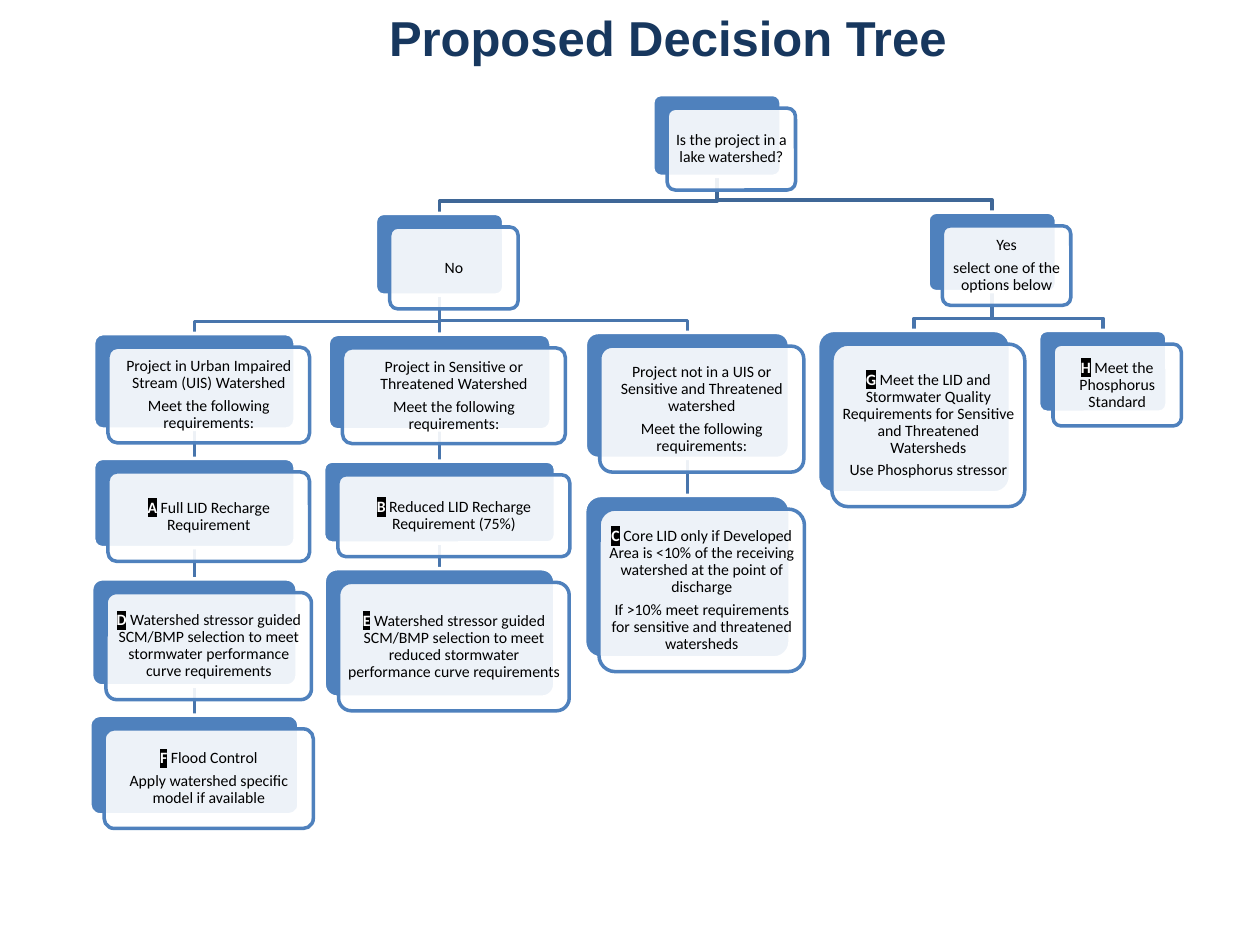
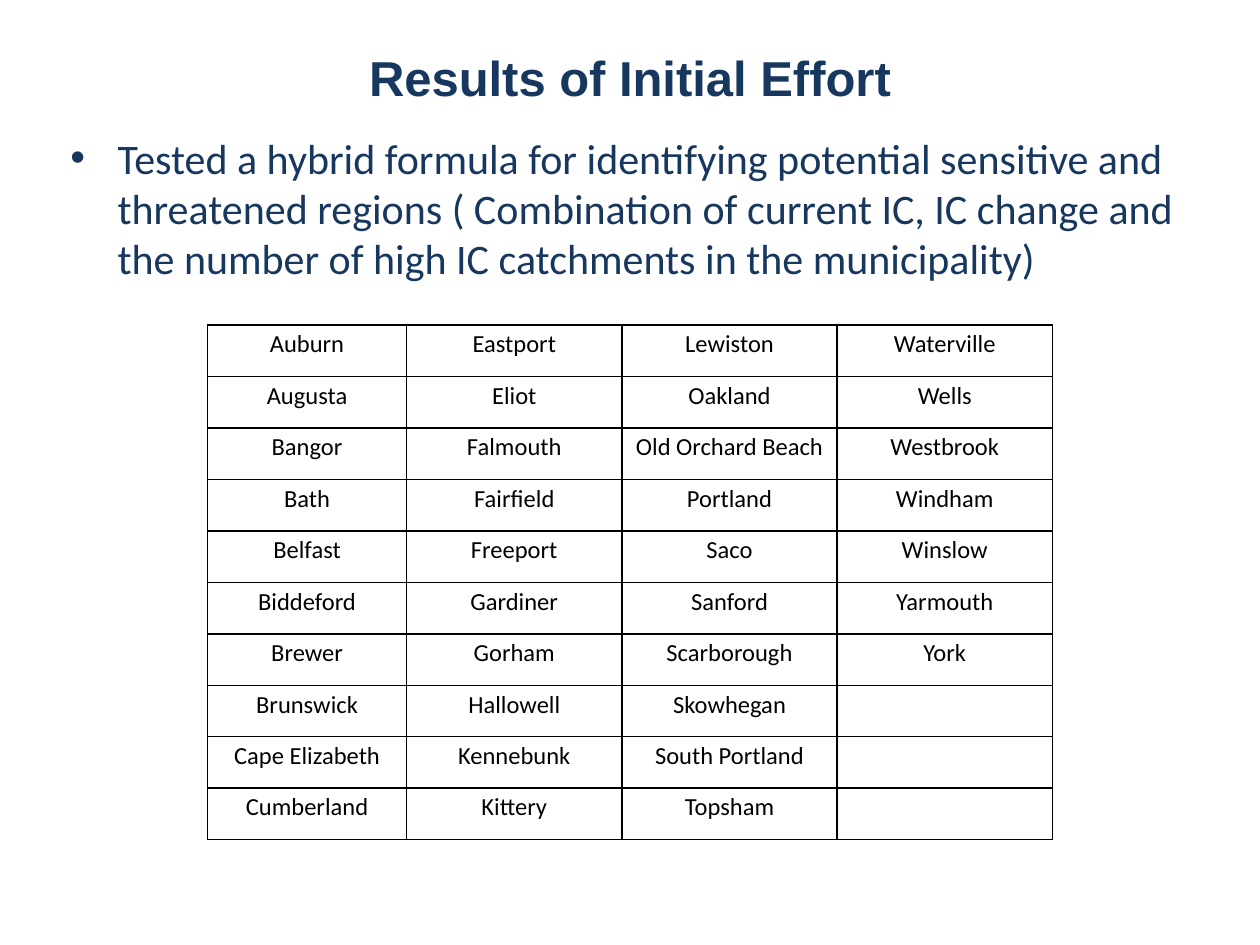
"""Build a decision tree slide and a slide with the towns of the first test."""
from dataclasses import dataclass
from typing import Any

from pptx import Presentation
from pptx.dml.color import RGBColor
from pptx.enum.shapes import MSO_CONNECTOR as Link, MSO_SHAPE as Preset
from pptx.enum.text import MSO_ANCHOR as Anchor, PP_ALIGN as Align
from pptx.oxml import parse_xml
from pptx.oxml.ns import nsdecls, qn
from pptx.util import Pt

COLORS = {
    "navy": "17375E", "blue": "4F81BD", "white": "FFFFFF", "black": "000000",
    "root_link": "3F6797", "link": "4875AC",
}
HEADING = {"name": "Arial", "size": Pt(28), "bold": True}
BULLET = {"name": "Calibri", "size": Pt(24)}
CARD_TEXT = {"name": "Calibri", "size": Pt(9), "bold": False}
CARD_TAG = CARD_TEXT | {"bold": True}
TOWN = {"name": "Calibri", "size": Pt(14)}
CARD_FRAME = {
    "word_wrap": True, "vertical_anchor": Anchor.MIDDLE,
    "margin_left": Pt(2.7), "margin_right": Pt(2.7),
    "margin_top": Pt(2.7), "margin_bottom": Pt(2.7),
}
CARD_PARAGRAPH = {"alignment": Align.CENTER, "line_spacing": 0.9, "space_after": Pt(3.15)}
FRONT_SHIFT = (8.2, 7.8)
BEND_ABOVE_CHILD = 6.9
URBAN, SENSITIVE, OTHER = 111.1, 251.2, 392.8


@dataclass(frozen=True)
class Card:
    """One question, answer or requirement in the tree, placed by its centre."""
    key: str
    parent: str
    center: float
    top: float
    width: float
    height: float
    lines: tuple[str, ...]
    tag: str = ""

    @property
    def bottom(self) -> float:
        """Return the lower edge."""
        return self.top + self.height


MEET = "Meet the following requirements:"
CARDS = (
    Card("lake", "", 409.7, 54, 73.4, 46.8, ("Is the project in a lake watershed?",)),
    Card("no", "lake", SENSITIVE, 121.9, 73.4, 46.8, ("No",)),
    Card("urban", "no", URBAN, 190.6, 115.2, 54.7,
         ("Project in Urban Impaired Stream (UIS) Watershed", MEET)),
    Card("A", "urban", URBAN, 261.9, 115.2, 51.1, ("Full LID Recharge Requirement",), "A"),
    Card("D", "A", URBAN, 330.8, 117.4, 61.2,
         ("Watershed stressor guided SCM/BMP selection to meet stormwater "
          "performance curve requirements",), "D"),
    Card("F", "D", URBAN, 408.7, 119.5, 56.9,
         ("Flood Control", "Apply watershed specific model if available"), "F"),
    Card("sensitive", "no", SENSITIVE, 191, 127.4, 54.7,
         ("Project in Sensitive or Threatened Watershed", MEET)),
    Card("B", "sensitive", SENSITIVE, 263.5, 132.5, 46.8,
         ("Reduced LID Recharge Requirement (75%)",), "B"),
    Card("E", "B", SENSITIVE, 325, 131.8, 73.4,
         ("Watershed stressor guided SCM/BMP selection to meet reduced stormwater "
          "performance curve requirements",), "E"),
    Card("other", "no", OTHER, 190, 116.6, 72,
         ("Project not in a UIS or Sensitive and Threatened watershed", MEET)),
    Card("C", "other", OTHER, 283.1, 117.4, 92.9,
         ("Core LID only if Developed Area is <10% of the receiving watershed "
          "at the point of discharge",
          "If >10% meet requirements for sensitive and threatened watersheds"), "C"),
    Card("yes", "lake", 567, 121.3, 73.4, 45.4, ("Yes", "select one of the options below")),
    Card("G", "yes", 522.3, 188.8, 110.2, 92.9,
         ("Meet the LID and Stormwater Quality Requirements for Sensitive and "
          "Threatened Watersheds", "Use Phosphorus stressor"), "G"),
    Card("H", "yes", 630.2, 188.8, 73.4, 46.8, ("Meet the Phosphorus Standard",), "H"),
)
TOWN_COLUMNS = (
    ("Auburn", "Augusta", "Bangor", "Bath", "Belfast", "Biddeford", "Brewer",
     "Brunswick", "Cape Elizabeth", "Cumberland"),
    ("Eastport", "Eliot", "Falmouth", "Fairfield", "Freeport", "Gardiner", "Gorham",
     "Hallowell", "Kennebunk", "Kittery"),
    ("Lewiston", "Oakland", "Old Orchard Beach", "Portland", "Saco", "Sanford",
     "Scarborough", "Skowhegan", "South Portland", "Topsham"),
    ("Waterville", "Wells", "Westbrook", "Windham", "Winslow", "Yarmouth", "York"),
)
TOWN_WIDTHS = (113.8, 123, 123, 123)
TOWN_ROW = 29.4


def rgb(color: str) -> RGBColor:
    """Return a named colour."""
    return RGBColor.from_string(COLORS[color])


def set_all(target: Any, values: dict[str, Any]) -> None:
    """Set every attribute in values on target."""
    for name, value in values.items():
        setattr(target, name, value)


def add_run(paragraph: Any, words: str, font: dict[str, Any], color: str) -> Any:
    """Add a formatted run to a paragraph."""
    run = paragraph.add_run()
    run.text = words
    set_all(run.font, font)
    run.font.color.rgb = rgb(color)
    return run


def set_line(line: Any, color: str) -> None:
    """Give a line the width used throughout the tree."""
    line.color.rgb = rgb(color)
    line.width = Pt(2)


def add_titled_slide(deck: Any, words: str, left: float, top: float, height: float) -> Any:
    """Add a title-only slide with the shared title style."""
    slide = deck.slides.add_slide(deck.slide_layouts[5])
    title = slide.shapes.title
    set_all(title, {"left": Pt(left), "top": Pt(top), "width": Pt(648), "height": Pt(height)})
    title.text_frame.vertical_anchor = Anchor.MIDDLE
    heading = title.text_frame.paragraphs[0]
    heading.alignment = Align.CENTER
    add_run(heading, words, HEADING, "navy")
    return slide


def add_branch(slide: Any, parent: Card, child: Card, color: str) -> Any:
    """Draw a link from parent to child and return it if it is a straight connector."""
    if parent.center == child.center:
        branch = slide.shapes.add_connector(
            Link.STRAIGHT, Pt(parent.center), Pt(parent.bottom), Pt(child.center), Pt(child.top))
        branch._element.spPr.append(parse_xml(f"<a:effectLst {nsdecls('a')}/>"))
        set_line(branch.line, color)
        return branch
    bend = Pt(child.top - BEND_ABOVE_CHILD)
    outline = slide.shapes.build_freeform(Pt(parent.center), Pt(parent.bottom))
    outline.add_line_segments(
        [(Pt(parent.center), bend), (Pt(child.center), bend), (Pt(child.center), Pt(child.top))],
        close=False)
    elbow = outline.convert_to_shape()
    elbow.fill.background()
    elbow.shadow.inherit = False
    set_line(elbow.line, color)
    return None


def add_panel(slide: Any, card: Card, shift: tuple[float, float], fill: str, edge: str) -> Any:
    """Draw one rounded panel of a card."""
    panel = slide.shapes.add_shape(
        Preset.ROUNDED_RECTANGLE, Pt(card.center - card.width / 2 + shift[0]),
        Pt(card.top + shift[1]), Pt(card.width), Pt(card.height))
    panel.adjustments[0] = 0.1
    panel.shadow.inherit = False
    panel.fill.solid()
    panel.fill.fore_color.rgb = rgb(fill)
    set_line(panel.line, edge)
    return panel


def add_card(slide: Any, card: Card) -> Any:
    """Draw a card with its text and return its back panel."""
    back = add_panel(slide, card, (0, 0), "blue", "white")
    front = add_panel(slide, card, FRONT_SHIFT, "white", "blue")
    front_fill = front._element.spPr.find(qn("a:solidFill"))
    front_fill[0].append(parse_xml(f'<a:alpha {nsdecls("a")} val="90000"/>'))
    frame = front.text_frame
    set_all(frame, CARD_FRAME)
    for number, words in enumerate(card.lines):
        paragraph = frame.add_paragraph() if number else frame.paragraphs[0]
        set_all(paragraph, CARD_PARAGRAPH)
        if card.tag and not number:
            tag = add_run(paragraph, card.tag, CARD_TAG, "white")
            tag._r.rPr.find(qn("a:solidFill")).addnext(parse_xml(
                f'<a:highlight {nsdecls("a")}><a:srgbClr val="{COLORS["black"]}"/></a:highlight>'))
            words = f" {words}"
        add_run(paragraph, words, CARD_TEXT, "black")
    return back


def add_tree(slide: Any) -> None:
    """Draw the links behind the cards, then join the straight ones."""
    by_key = {card.key: card for card in CARDS}
    branches = {
        card.key: add_branch(slide, by_key[card.parent], card,
                             "root_link" if card.parent == "lake" else "link")
        for card in CARDS if card.parent
    }
    backs = {card.key: add_card(slide, card) for card in CARDS}
    for key, branch in branches.items():
        if branch is not None:
            branch.begin_connect(backs[by_key[key].parent], 2)
            branch.end_connect(backs[key], 0)


def add_finding(slide: Any, words: str) -> None:
    """Add the bulleted finding above the table."""
    frame = slide.shapes.add_textbox(Pt(33.1), Pt(72), Pt(648), Pt(100)).text_frame
    frame.word_wrap = True
    finding = frame.paragraphs[0]
    properties = finding._p.get_or_add_pPr()
    properties.set("marL", str(Pt(27)))
    properties.set("indent", str(Pt(-27)))
    properties.append(parse_xml(f'<a:buFont {nsdecls("a")} typeface="Arial"/>'))
    properties.append(parse_xml(f'<a:buChar {nsdecls("a")} char="•"/>'))
    add_run(finding, words, BULLET, "navy")


def add_borders(cell: Any) -> None:
    """Draw a thin black line on every side of a cell."""
    properties = cell._tc.get_or_add_tcPr()
    for side in "LRTB":
        properties.append(parse_xml(
            f'<a:ln{side} {nsdecls("a")} w="{Pt(1)}"><a:solidFill>'
            f'<a:srgbClr val="{COLORS["black"]}"/></a:solidFill></a:ln{side}>'))


def add_towns(slide: Any) -> None:
    """Add the table of towns, filled column by column."""
    rows = max(map(len, TOWN_COLUMNS))
    towns = slide.shapes.add_table(
        rows, len(TOWN_COLUMNS), Pt(118.6), Pt(185.8),
        Pt(sum(TOWN_WIDTHS)), Pt(TOWN_ROW * rows)).table
    set_all(towns, {"first_row": False, "horz_banding": False})
    for row in towns.rows:
        row.height = Pt(TOWN_ROW)
    for index, (names, width) in enumerate(zip(TOWN_COLUMNS, TOWN_WIDTHS)):
        towns.columns[index].width = Pt(width)
        for number in range(rows):
            cell = towns.cell(number, index)
            set_all(cell, {"margin_left": Pt(5), "margin_right": Pt(5),
                           "margin_top": 0, "margin_bottom": 0})
            add_borders(cell)
            cell.fill.background()
            if number < len(names):
                paragraph = cell.text_frame.paragraphs[0]
                set_all(paragraph, {"alignment": Align.CENTER, "line_spacing": 1.15})
                add_run(paragraph, names[number], TOWN, "black")


def main() -> None:
    """Build and save both slides."""
    deck = Presentation()
    set_all(deck, {"slide_width": Pt(720), "slide_height": Pt(540)})
    add_tree(add_titled_slide(deck, "Proposed Decision Tree", 57.6, -23.8, 90))
    results = add_titled_slide(deck, "Results of Initial Effort", 36, 21.6, 44.6)
    add_finding(results, "Tested a hybrid formula for identifying potential sensitive and "
                         "threatened regions ( Combination of current IC, IC change and the "
                         "number of high IC catchments in the municipality)")
    add_towns(results)
    deck.save("out.pptx")


if __name__ == "__main__":
    main()
